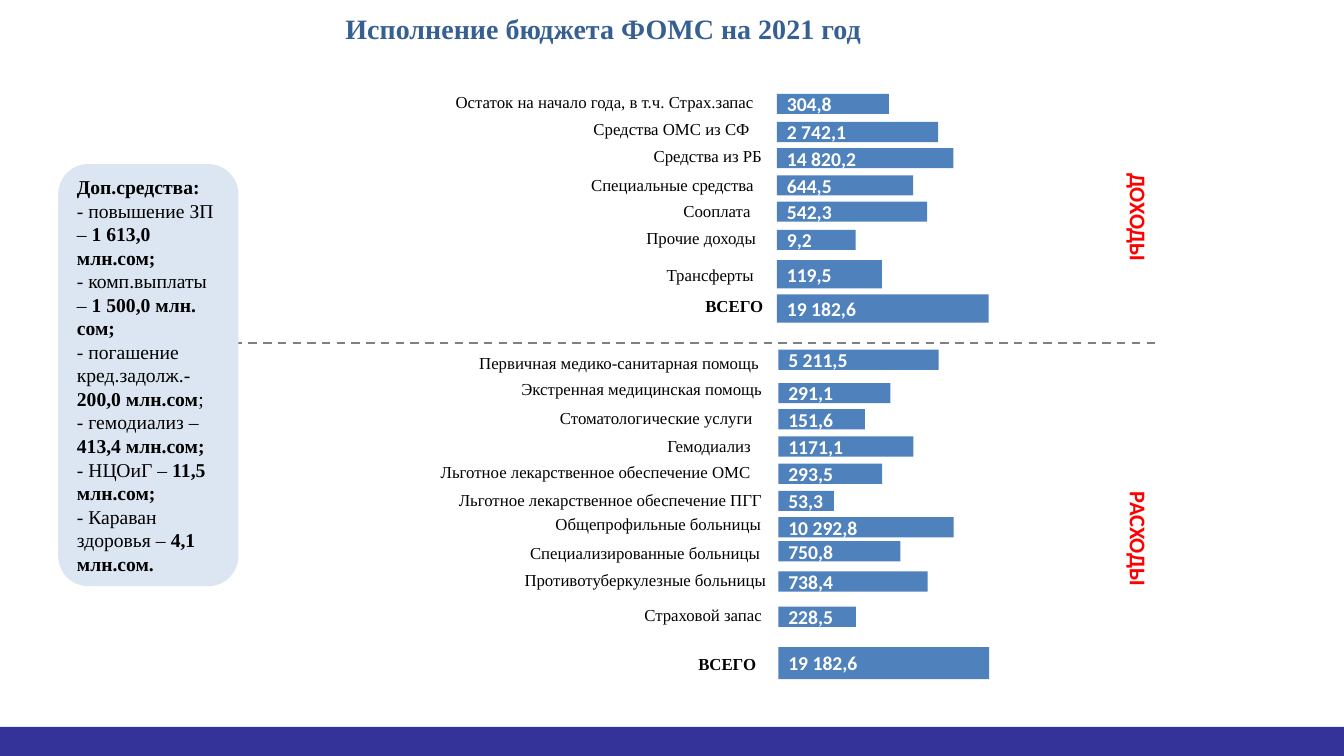
"""Build the slide on the 2021 health insurance fund budget."""
from dataclasses import dataclass

from lxml import etree
from pptx import Presentation
from pptx import util as u
from pptx.dml.color import RGBColor
from pptx.enum import dml, shapes, text
from pptx.oxml.ns import qn

TITLE = "Исполнение бюджета ФОМС на 2021 год"

# label, value, label left, label right, label top, bar top, bar width, bar height
INCOME = [
    ("Остаток на начало года, в т.ч. Страх.запас", "304,8", 268, 538.4, 61.9, 67, 80, 14.4),
    ("Средства ОМС из СФ", "2 742,1", 267, 535.4, 81.4, 87.1, 115.2, 14.4),
    ("Средства из РБ", "14 820,2", 307, 544.2, 100.8, 105.8, 126, 14.4),
    ("Специальные средства", "644,5", 332, 538.4, 121, 125.3, 97.2, 14.4),
    ("Сооплата", "542,3", 388, 536.2, 139.7, 144, 107.3, 14.4),
    ("Прочие доходы", "9,2", 374.4, 539.9, 159.1, 164.2, 56.2, 14.4),
    ("Трансферты", "119,5", 289.4, 538.4, 185.8, 185.8, 74.9, 20.2),
    ("ВСЕГО", "19 182,6", 388, 545, 207.4, 210.2, 151.2, 20.2),
]
EXPENSES = [
    ("Первичная медико-санитарная помощь", "5 211,5", 289.4, 542.2, 248.4, 249.8, 114.5, 14.4),
    ("Экстренная медицинская помощь", "291,1", 270, 544.3, 267.1, 273.6, 80, 14.4),
    ("Стоматологические услуги", "151,6", 303, 537.6, 288, 292.3, 61.9, 14.4),
    ("Гемодиализ", "1171,1", 289.4, 536.2, 307.4, 311.8, 96.5, 14.4),
    ("Льготное лекарственное обеспечение ОМС", "293,5", 184.3, 536.2, 326.2, 331.2, 74.2, 14.4),
    ("Льготное лекарственное обеспечение ПГГ", "53,3", 202.3, 544.3, 346.3, 350.6, 39.6, 14.4),
    ("Общепрофильные больницы", "10 292,8", 360, 543.6, 363.6, 369.4, 125.3, 14.4),
    ("Специализированные больницы", "750,8", 289.4, 542.9, 383.8, 386.6, 87.1, 14.4),
    ("Противотуберкулезные больницы", "738,4", 293.8, 547.2, 403.2, 408.2, 106.6, 14.4),
    ("Страховой запас", "228,5", 317.5, 544.2, 428.4, 433.4, 55.4, 14.4),
    ("ВСЕГО", "19 182,6", 374.4, 540, 463.7, 462.2, 150.5, 23),
]
SECTIONS = [
    ("ДОХОДЫ", INCOME, 555, (774, 142.6, 78.5, 26.6)),
    ("РАСХОДЫ", EXPENSES, 556, (771.8, 372.2, 82.8, 26.6)),
]
# each line is a list of (text, bold)
EXTRA_FUNDS = [
    [("Доп.средства:", True)],
    [("- повышение ЗП – ", False), ("1 613,0 млн.сом;", True)],
    [("- комп.выплаты – ", False), ("1 500,0 млн. сом;", True)],
    [("- погашение кред.задолж.- ", False), ("200,0 млн.сом", True), (";", False)],
    [("- гемодиализ – ", False), ("413,4 млн.сом;", True)],
    [("- НЦОиГ – ", False), ("11,5 млн.сом;", True)],
    [("- Караван здоровья – ", False), ("4,1 млн.сом.", True)],
]


@dataclass(frozen=True)
class Theme:
    """Colours, fonts and type sizes."""
    bar: str = "4F81BD"
    panel: str = "DCE6F2"
    footer: str = "333399"
    title: str = "376092"
    section: str = "FF0000"
    rule: str = "808080"
    ink: str = "000000"
    paper: str = "FFFFFF"
    serif: str = "Times New Roman"
    sans: str = "Calibri"
    title_size: int = 20
    section_size: int = 16
    value_size: int = 14
    label_size: int = 12


THEME = Theme()
INSET = 7.2
LABEL_HEIGHT = 21.8


def write(box, lines, *, size, color, font, align=text.PP_ALIGN.LEFT, wrap=True,
          anchor=text.MSO_ANCHOR.TOP):
    """Fill a shape with lines, each a list of (text, bold)."""
    frame = box.text_frame
    frame.word_wrap = wrap
    frame.vertical_anchor = anchor
    for index, line in enumerate(lines):
        para = frame.add_paragraph() if index else frame.paragraphs[0]
        para.alignment = align
        for wording, bold in line:
            span = para.add_run()
            span.text = wording
            span.font.size = u.Pt(size)
            span.font.name = font
            span.font.bold = bold
            span.font.color.rgb = RGBColor.from_string(color)


def add_block(page, place, fill, kind=shapes.MSO_SHAPE.RECTANGLE):
    """Add a flat filled shape."""
    block = page.shapes.add_shape(kind, *map(u.Pt, place))
    block.shadow.inherit = False
    block.fill.solid()
    block.fill.fore_color.rgb = RGBColor.from_string(fill)
    block.line.fill.background()
    return block


def add_text(page, place, wording, bold=False, **style):
    """Add a text box that holds one line."""
    box = page.shapes.add_textbox(*map(u.Pt, place))
    write(box, [[(wording, bold)]], **style)
    return box


def add_section(page, name, rows, bar_left, name_place):
    """Add the labels, bars and side heading of one section."""
    for label, value, left, right, top, bar_top, width, height in rows:
        bar = add_block(page, (bar_left, bar_top, width, height), THEME.bar)
        write(bar, [[(value, True)]], size=THEME.value_size, color=THEME.paper,
              font=THEME.sans, anchor=text.MSO_ANCHOR.MIDDLE)
        add_text(page, (left, top, right + INSET - left, LABEL_HEIGHT), label,
                 bold=label == "ВСЕГО", size=THEME.label_size, color=THEME.ink,
                 font=THEME.serif, align=text.PP_ALIGN.RIGHT)
    heading = add_text(page, name_place, name, bold=True, size=THEME.section_size,
                       color=THEME.section, font=THEME.sans, wrap=False)
    heading.rotation = 90


def add_rule(page, left, right, top):
    """Add the dashed line between the sections."""
    rule = page.shapes.add_connector(shapes.MSO_CONNECTOR.STRAIGHT,
                                     *map(u.Pt, (left, top, right, top)))
    rule.line.color.rgb = RGBColor.from_string(THEME.rule)
    rule.line.width = u.Pt(1.5)
    rule.line.dash_style = dml.MSO_LINE.DASH
    etree.SubElement(rule._element.spPr, qn("a:effectLst"))


def main():
    """Build and save the deck."""
    deck = Presentation()
    deck.slide_width, deck.slide_height = u.Pt(960), u.Pt(540)
    page = deck.slides.add_slide(deck.slide_layouts[6])
    add_block(page, (0, 519.2, 960, 20.8), THEME.footer)
    for section in SECTIONS:
        add_section(page, *section)
    add_rule(page, 135.4, 825.8, 244.8)
    add_text(page, (97.9, 5, 666, 31.7), TITLE, bold=True, size=THEME.title_size,
             color=THEME.title, font=THEME.serif, align=text.PP_ALIGN.CENTER)
    panel = add_block(page, (41.6, 117.2, 128.7, 301.5), THEME.panel,
                      shapes.MSO_SHAPE.ROUNDED_RECTANGLE)
    write(panel, EXTRA_FUNDS, size=THEME.value_size, color=THEME.ink,
          font=THEME.serif, anchor=text.MSO_ANCHOR.MIDDLE)
    deck.save("out.pptx")


if __name__ == "__main__":
    main()
